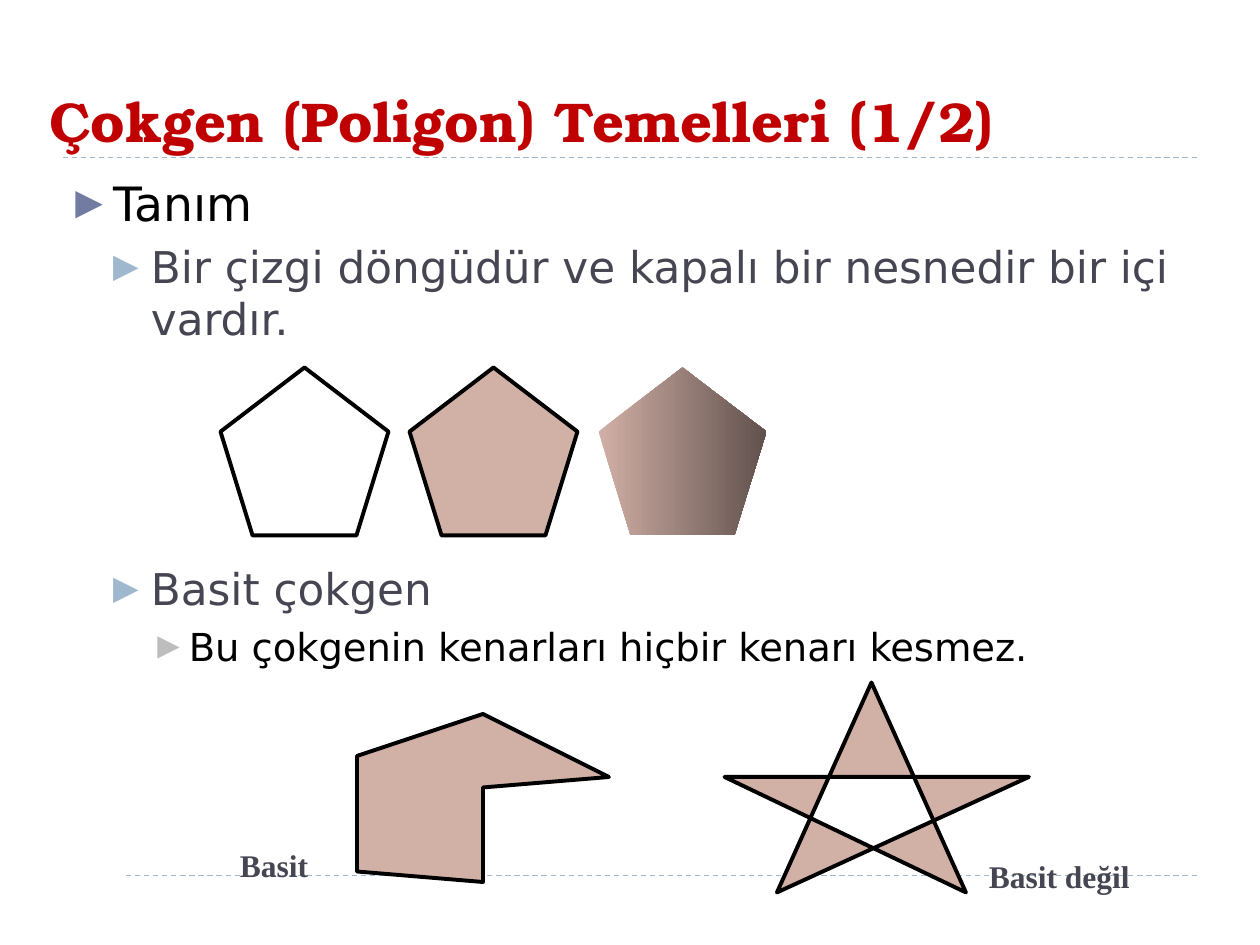
from dataclasses import dataclass

from pptx import Presentation
from pptx.dml.color import RGBColor
from pptx.enum.dml import MSO_LINE
from pptx.enum.shapes import MSO_CONNECTOR, MSO_SHAPE
from pptx.enum.text import MSO_ANCHOR
from pptx.oxml.ns import qn
from pptx.util import Pt
from lxml.etree import SubElement


@dataclass(frozen=True)
class Theme:
    red: str = "C00000"
    black: str = "000000"
    white: str = "FFFFFF"
    slate: str = "464653"
    rule: str = "9FB8CD"
    rose: str = "D1B0A6"
    dark: str = "61514D"
    head_font: str = "TeX Gyre Bonum"
    body_font: str = "DejaVu Sans"
    tag_font: str = "Times New Roman"
    head_size: int = 32
    tag_size: int = 18
    edge: float = 2.25
    # per list level: size, text colour, bullet colour, left margin, hanging
    levels: tuple = (
        (27, "000000", "727CA3", 21.6, 21.6),
        (25, "464653", "9FB8CD", 43.2, 21.6),
        (22, "000000", "BDBDBD", 64.8, 18),
    )


def rgb(code):
    return RGBColor.from_string(code)


class Deck:
    def __init__(self, slide, theme):
        self.slide = slide
        self.shapes = slide.shapes
        self.theme = theme

    def rule(self, left, right, y):
        line = self.shapes.add_connector(
            MSO_CONNECTOR.STRAIGHT, Pt(left), Pt(y), Pt(right), Pt(y))
        line.line.color.rgb = rgb(self.theme.rule)
        line.line.width = Pt(0.75)
        line.line.dash_style = MSO_LINE.DASH
        SubElement(line._element.spPr, qn("a:effectLst"))

    def paint(self, shape, fill=None, edge=True):
        """Fill with nothing, one colour, or a pair as a gradient."""
        shape.shadow.inherit = False
        if fill is None:
            shape.fill.background()
        elif isinstance(fill, tuple):
            shape.fill.gradient()
            shape.fill.gradient_angle = 0
            for stop, code in zip(shape.fill.gradient_stops, fill):
                stop.color.rgb = rgb(code)
        else:
            shape.fill.solid()
            shape.fill.fore_color.rgb = rgb(fill)
        if edge:
            shape.line.color.rgb = rgb(self.theme.black)
            shape.line.width = Pt(self.theme.edge)
        else:
            shape.line.fill.background()

    def shape(self, kind, box, fill=None, edge=True):
        self.paint(self.shapes.add_shape(kind, *map(Pt, box)), fill, edge)

    def outline(self, points, fill):
        start, *rest = [(Pt(x), Pt(y)) for x, y in points]
        form = self.shapes.build_freeform(*start)
        form.add_line_segments(rest, close=True)
        self.paint(form.convert_to_shape(), fill)

    def style(self, para, font, size, color, bold=False):
        for run in para.runs:
            run.font.name = font
            run.font.size = Pt(size)
            run.font.bold = bold
            run.font.color.rgb = rgb(color)

    def text(self, words, box, font, size, color, wrap=False):
        frame = self.shapes.add_textbox(*map(Pt, box)).text_frame
        frame.word_wrap = wrap
        frame.vertical_anchor = MSO_ANCHOR.MIDDLE if wrap else MSO_ANCHOR.TOP
        frame.text = words
        self.style(frame.paragraphs[0], font, size, color, bold=True)

    def bullet(self, para, level):
        size, color, mark, left, hang = self.theme.levels[level]
        para.level = level
        self.style(para, self.theme.body_font, size, color)
        props = para._p.get_or_add_pPr()
        props.set("marL", str(Pt(left)))
        props.set("indent", str(-Pt(hang)))
        tint = SubElement(props, qn("a:buClr"))
        SubElement(tint, qn("a:srgbClr"), val=mark)
        SubElement(props, qn("a:buSzPct"), val="76000")
        SubElement(props, qn("a:buFont"), typeface=self.theme.body_font)
        SubElement(props, qn("a:buChar"), char="▶")

    def list(self, items, box):
        """Each item is its level, the space before it, and its words."""
        frame = self.shapes.add_textbox(*map(Pt, box)).text_frame
        frame.word_wrap = True
        frame.text = "\n".join(words for _, _, words in items)
        for para, (level, space, _) in zip(frame.paragraphs, items):
            para.space_before = Pt(space)
            self.bullet(para, level)


def main():
    show = Presentation()
    show.slide_width, show.slide_height = Pt(720), Pt(540)
    theme = Theme()
    deck = Deck(show.slides.add_slide(show.slide_layouts[6]), theme)

    for y in (500.4, 90):
        deck.rule(36, 684, y)
    deck.shape(MSO_SHAPE.RECTANGLE, (25.2, 491, 45.4, 45.4),
               theme.white, edge=False)

    deck.text("Çokgen (Poligon) Temelleri (1/2)", (21, 23.8, 675, 90),
              theme.head_font, theme.head_size, theme.red, wrap=True)
    figure_gap = 124
    deck.list([
        (0, 6, "Tanım"),
        (1, 5, "Bir çizgi döngüdür ve kapalı bir nesnedir bir içi vardır."),
        (1, figure_gap, "Basit çokgen"),
        (2, 5, "Bu çokgenin kenarları hiçbir kenarı kesmez."),
    ], (36, 96, 648, 389))

    side, pitch = 96, 108
    looks = ((None, True), (theme.rose, True),
             ((theme.rose, theme.dark), False))
    for i, (fill, edge) in enumerate(looks):
        deck.shape(MSO_SHAPE.REGULAR_PENTAGON,
                   (126 + i * pitch, 210, side, side), fill, edge)

    simple = [(276, 450), (276, 504), (204, 498),
              (204, 432), (276, 408), (348, 444)]
    star = [(414, 444), (588, 444), (444, 510), (498, 390), (552, 510)]
    for points in (simple, star):
        deck.outline(points, theme.rose)

    for words, box in (("Basit", (130, 480, 54, 29)),
                       ("Basit değil", (558, 486, 96, 29))):
        deck.text(words, box, theme.tag_font, theme.tag_size, theme.slate)

    show.save("out.pptx")


if __name__ == "__main__":
    main()
